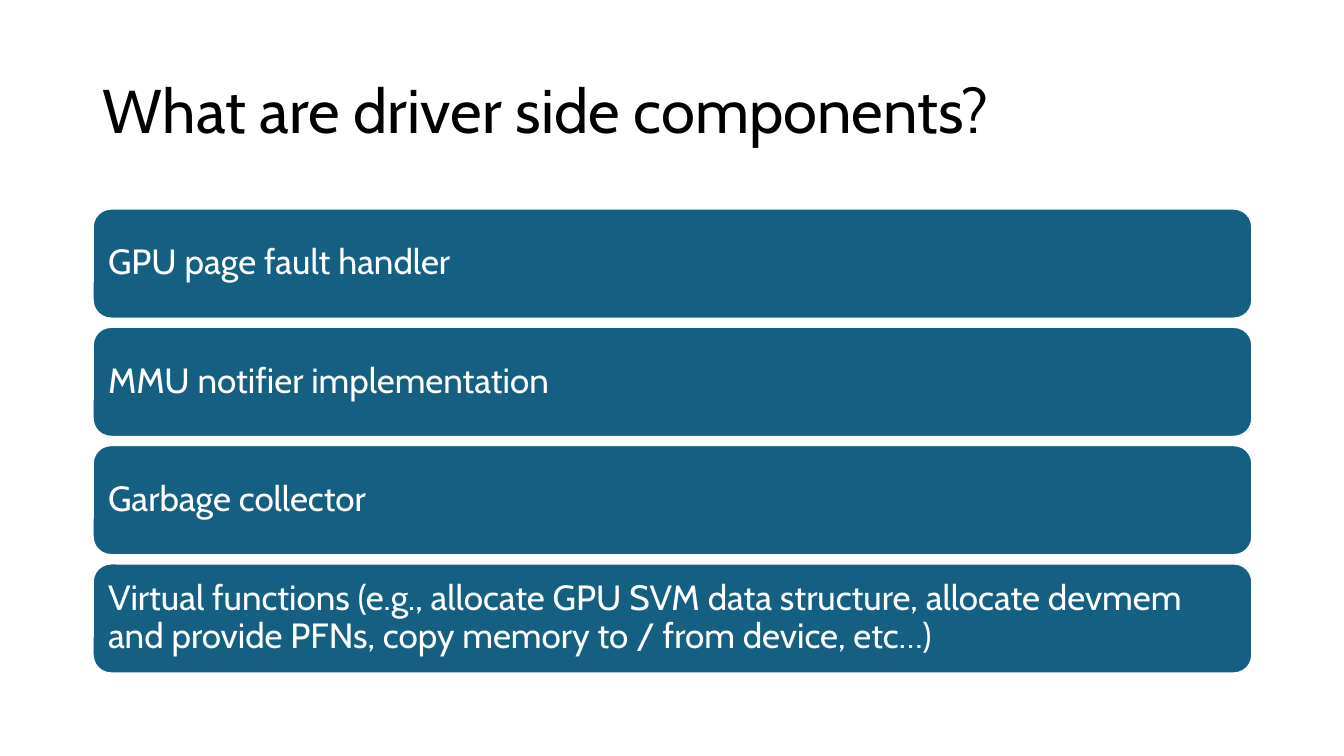
import pptx
import pptx.dml.color
import pptx.enum.shapes
import pptx.enum.text
import pptx.util
from dataclasses import dataclass

Inches = pptx.util.Inches
Pt = pptx.util.Pt
Color = pptx.dml.color.RGBColor.from_string
Align = pptx.enum.text.PP_ALIGN
Anchor = pptx.enum.text.MSO_ANCHOR

TITLE = "What are driver side components?"
PARTS = [
    "GPU page fault handler",
    "MMU notifier implementation",
    "Garbage collector",
    "Virtual functions (e.g., allocate GPU SVM data structure, allocate devmem "
    "and provide PFNs, copy memory to / from device, etc…)",
]


@dataclass(frozen=True)
class Theme:
    font: str = "Cabin"
    ink: str = "000000"
    fill: str = "156082"
    paper: str = "FFFFFF"
    head: int = 44
    body: int = 25
    edge: float = 1.5


THEME = Theme()
LEFT, WIDTH = 0.92, 11.5
HEAD_TOP, HEAD_HIGH = 0.4, 1.45
TOP, BOTTOM, HIGH = 2.07, 6.68, 1.09
STEP = (BOTTOM - TOP - HIGH) / (len(PARTS) - 1)
INSET = Inches(0.1)


def assign(target, values):
    for name, value in values.items():
        setattr(target, name, value)


def write(shape, text, size, color, frame_style):
    frame = shape.text_frame
    frame.text = text
    assign(frame, {"word_wrap": True, "vertical_anchor": Anchor.MIDDLE,
                   "auto_size": pptx.enum.text.MSO_AUTO_SIZE.NONE, **frame_style})
    para = frame.paragraphs[0]
    assign(para, {"alignment": Align.LEFT, "line_spacing": 0.9})
    font = para.runs[0].font
    assign(font, {"name": THEME.font, "size": Pt(size), "bold": False})
    font.color.rgb = Color(color)


def add_bar(slide, text, top):
    bar = slide.shapes.add_shape(
        pptx.enum.shapes.MSO_SHAPE.ROUNDED_RECTANGLE,
        Inches(LEFT), Inches(top), Inches(WIDTH), Inches(HIGH))
    bar.shadow.inherit = False
    bar.fill.solid()
    bar.fill.fore_color.rgb = Color(THEME.fill)
    bar.line.color.rgb = Color(THEME.paper)
    bar.line.width = Pt(THEME.edge)
    sides = ("left", "top", "right", "bottom")
    write(bar, text, THEME.body, THEME.paper,
          {f"margin_{side}": INSET for side in sides})


def main():
    deck = pptx.Presentation()
    assign(deck, {"slide_width": Inches(13.33), "slide_height": Inches(7.5)})
    slide = deck.slides.add_slide(deck.slide_layouts.get_by_name("Title Only"))
    title = slide.shapes.title
    assign(title, {"left": Inches(LEFT), "top": Inches(HEAD_TOP),
                   "width": Inches(WIDTH), "height": Inches(HEAD_HIGH)})
    write(title, TITLE, THEME.head, THEME.ink, {})
    for row, text in enumerate(PARTS):
        add_bar(slide, text, TOP + row * STEP)
    deck.save("out.pptx")


if __name__ == "__main__":
    main()
